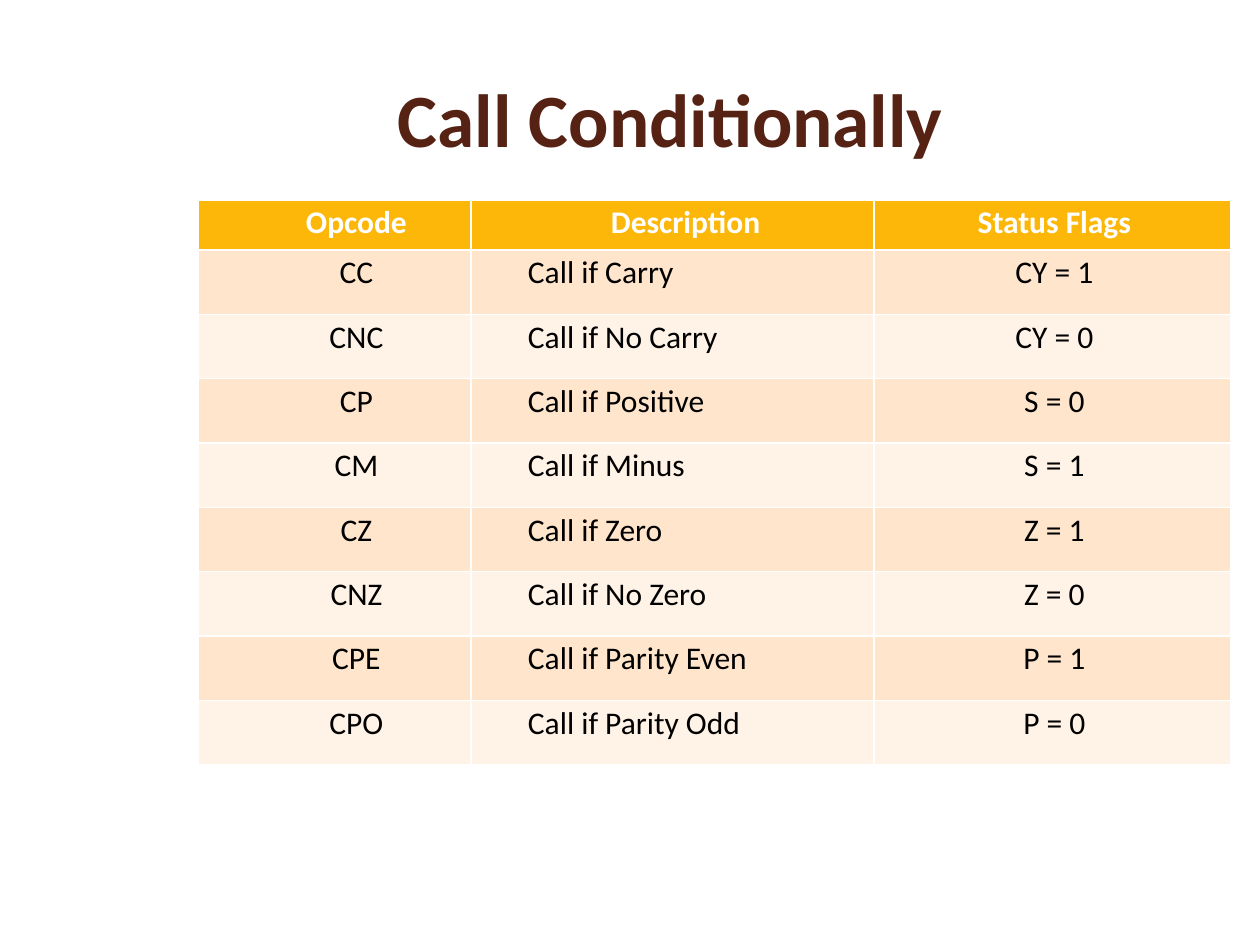
"""Build the slide listing the conditional call opcodes."""
from pptx import Presentation
from pptx.dml.color import RGBColor
from pptx.enum import text
from pptx.util import Pt

SCALE = 914400 / 126
LEFT, CENTER = text.PP_ALIGN.LEFT, text.PP_ALIGN.CENTER

HEADINGS = ("Opcode", "Description", "Status Flags")
CALLS = (
    ("CC", "Call if Carry", "CY = 1"),
    ("CNC", "Call if No Carry", "CY = 0"),
    ("CP", "Call if Positive", "S = 0"),
    ("CM", "Call if Minus", "S = 1"),
    ("CZ", "Call if Zero", "Z = 1"),
    ("CNZ", "Call if No Zero", "Z = 0"),
    ("CPE", "Call if Parity Even", "P = 1"),
    ("CPO", "Call if Parity Odd", "P = 0"),
)
COLUMN_WIDTHS = (273, 403, 357)
HEADING_INDENTS = (44, 140, 4)
CALL_INDENTS = (44, 57, 4)
ALIGNMENTS = (CENTER, LEFT, CENTER)


def px(length):
    return round(length * SCALE)


def color(value):
    return RGBColor.from_string(value)


class CallSlide:
    """Hold the style and the current page, and add each kind of element."""

    font_name = "Calibri"
    title_color = "562213"
    heading_fill = "FDB709"
    band_fills = ("FFE5CC", "FFF2E6")

    def __init__(self, deck):
        self.page = deck.slides.add_slide(deck.slide_layouts[5])

    def format(self, para, size, ink, bold, alignment):
        para.alignment = alignment
        font = para.font
        font.name, font.size, font.bold = self.font_name, Pt(size), bold
        font.color.rgb = color(ink)

    def title(self, words, left, top, width, height):
        box = self.page.shapes.title
        box.left, box.top = px(left), px(top)
        box.width, box.height = px(width), px(height)
        frame = box.text_frame
        frame.text = words
        frame.word_wrap = True
        frame.auto_size = text.MSO_AUTO_SIZE.NONE
        frame.vertical_anchor = text.MSO_ANCHOR.TOP
        frame.margin_left = frame.margin_right = frame.margin_bottom = 0
        frame.margin_top = px(3)
        self.format(frame.paragraphs[0], 43, self.title_color, True, LEFT)

    def cell(self, cell, words, indent, alignment, fill, ink, bold):
        cell.text = words
        cell.margin_left, cell.margin_top = px(indent), px(4)
        cell.margin_right = cell.margin_bottom = 0
        cell.vertical_anchor = text.MSO_ANCHOR.TOP
        cell.fill.solid()
        cell.fill.fore_color.rgb = color(fill)
        self.format(cell.text_frame.paragraphs[0], 18, ink, bold, alignment)

    def table(self, left, top, heading_height, body_height):
        grid = self.page.shapes.add_table(
            len(CALLS) + 1, len(HEADINGS), px(left), px(top),
            px(sum(COLUMN_WIDTHS)), px(heading_height + body_height)).table
        for column, width in zip(grid.columns, COLUMN_WIDTHS):
            column.width = px(width)
        for index, words in enumerate((HEADINGS, *CALLS)):
            heading = index == 0
            grid.rows[index].height = px(
                heading_height if heading else body_height / len(CALLS))
            fill = self.heading_fill if heading else self.band_fills[(index - 1) % 2]
            ink = "FFFFFF" if heading else "000000"
            indents = HEADING_INDENTS if heading else CALL_INDENTS
            for cell, word, indent, alignment in zip(
                    grid.rows[index].cells, words, indents, ALIGNMENTS):
                self.cell(cell, word, indent, alignment, fill, ink, heading)


def main():
    deck = Presentation()
    deck.slide_width, deck.slide_height = px(1260), px(945)
    slide = CallSlide(deck)
    slide.title("Call Conditionally", 398, 69, 631, 93)
    slide.table(198, 200, 50, 515)
    deck.save("out.pptx")


if __name__ == "__main__":
    main()
